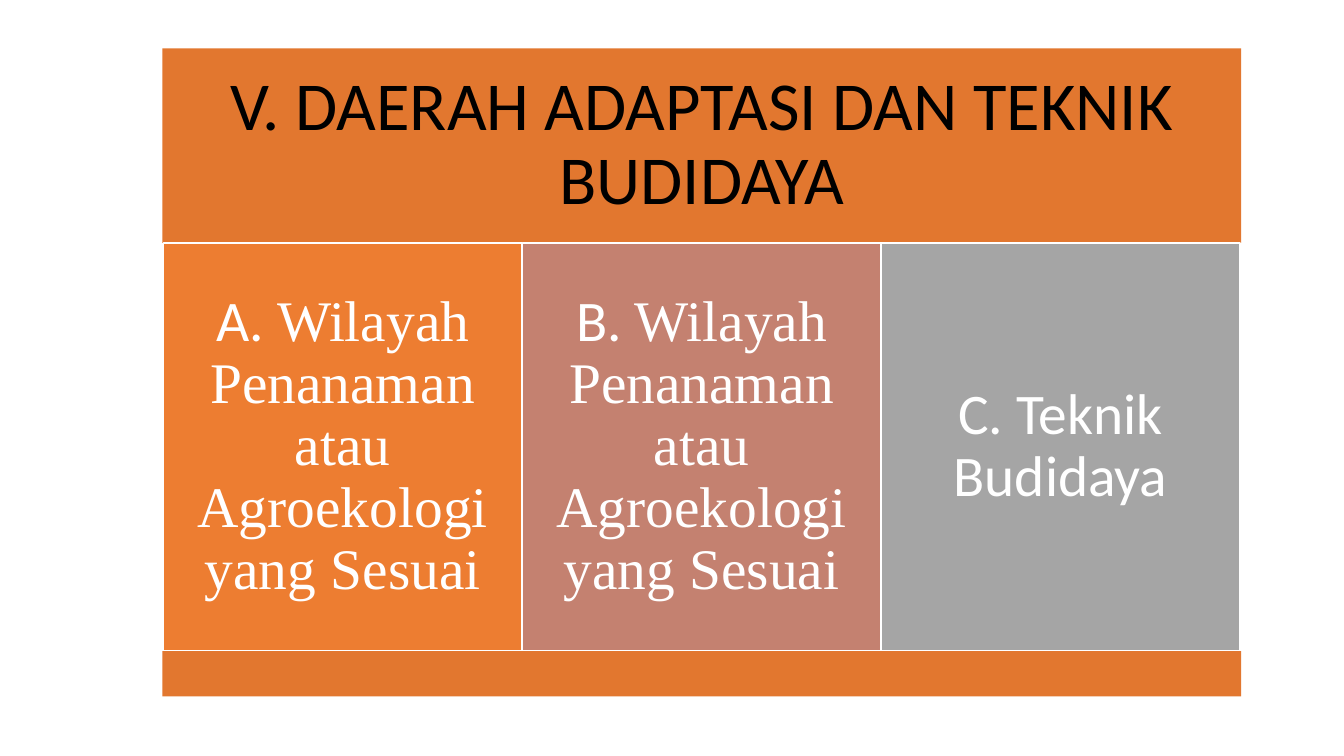
from pptx import Presentation
from pptx import util as u
from pptx.dml.color import RGBColor
from pptx.enum import shapes, text

PX = 9144  # 100 px to the inch
ORANGE, WHITE, BLACK = "E2772F", "FFFFFF", "000000"


def paint(fill, colour):
    fill.solid()
    fill.fore_color.rgb = RGBColor.from_string(colour)


def write(box, margin, size, colour, runs):
    """Fill a box with one centred paragraph of (wording, font) runs."""
    frame = box.text_frame
    frame.word_wrap = True
    frame.auto_size = text.MSO_AUTO_SIZE.NONE
    frame.vertical_anchor = text.MSO_ANCHOR.MIDDLE
    frame.margin_left = frame.margin_right = margin * PX
    frame.margin_top = frame.margin_bottom = margin * PX
    para = frame.paragraphs[0]
    para.alignment = text.PP_ALIGN.CENTER
    para.line_spacing = 0.9
    for wording, font in runs:
        span = para.add_run()
        span.text = wording
        span.font.name = font
        span.font.size = u.Pt(size)
        span.font.color.rgb = RGBColor.from_string(colour)


deck = Presentation()
deck.slide_width, deck.slide_height = 1333 * PX, 750 * PX
page = deck.slides.add_slide(deck.slide_layouts[5])

# Heading band
title = page.shapes.title
title.left, title.top = 161 * PX, 48 * PX
title.width, title.height = 1070 * PX, 193 * PX
paint(title.fill, ORANGE)
write(title, 20, 49, BLACK, [("V. DAERAH ADAPTASI DAN TEKNIK BUDIDAYA", "Calibri")])

# Three topic columns
region = ("Wilayah Penanaman atau Agroekologi yang Sesuai", "Times New Roman")
topics = [
    ("ED7D31", [("A. ", "Calibri"), region]),
    ("C48170", [("B. ", "Calibri"), region]),
    ("A5A5A5", [("C. Teknik Budidaya", "Calibri")]),
]
column_width = 356
for index, (colour, runs) in enumerate(topics):
    column = page.shapes.add_shape(
        shapes.MSO_SHAPE.RECTANGLE,
        (162 + index * column_width) * PX, 241 * PX, column_width * PX, 405 * PX)
    column.shadow.inherit = False
    paint(column.fill, colour)
    paint(column.line.fill, WHITE)
    column.line.width = u.Pt(1)
    write(column, 17, 41, WHITE, runs)

# Closing band
footer = page.shapes.add_shape(
    shapes.MSO_SHAPE.RECTANGLE, 161 * PX, 646 * PX, 1070 * PX, 45 * PX)
footer.shadow.inherit = False
paint(footer.fill, ORANGE)
footer.line.fill.background()

deck.save("out.pptx")
